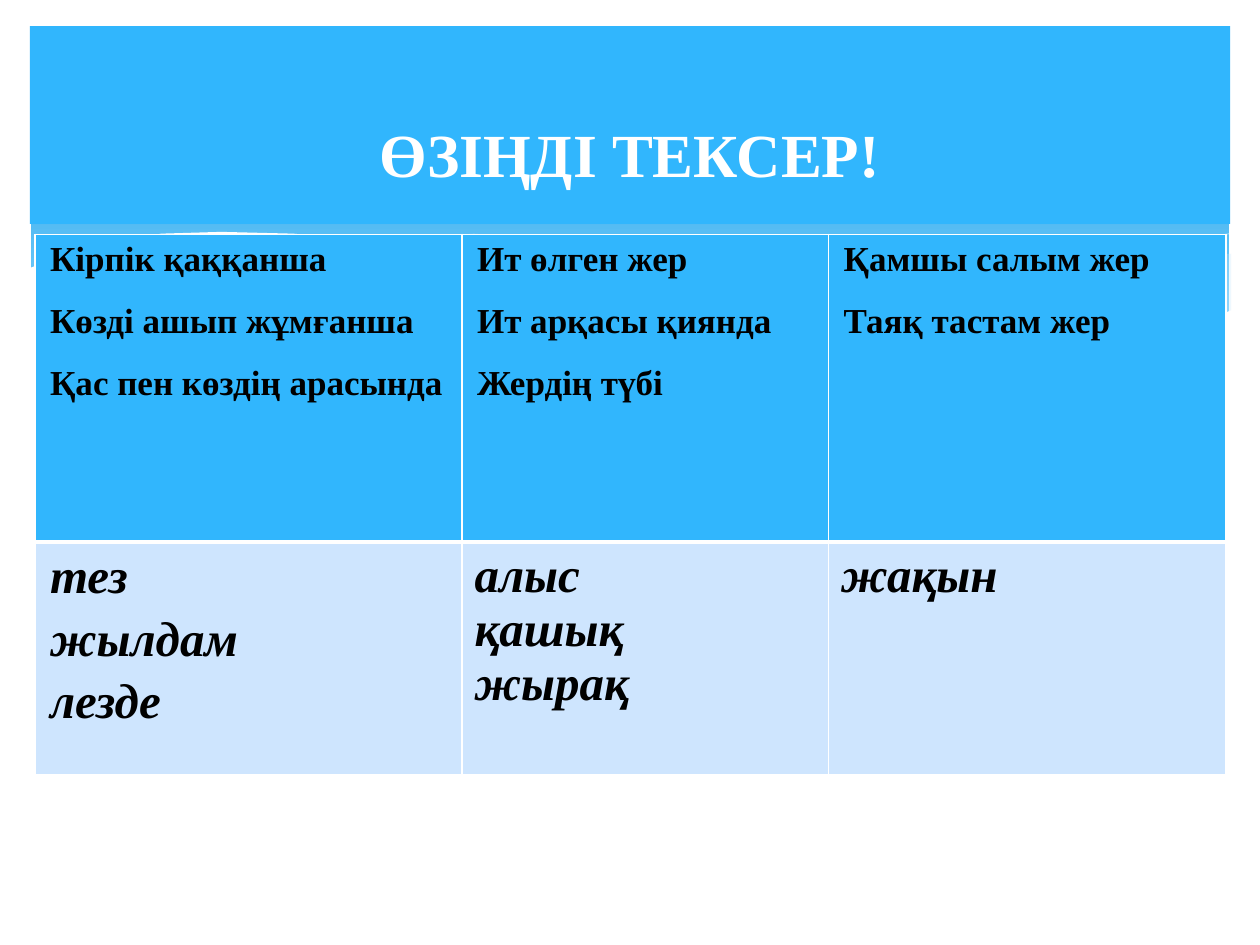
from lxml.etree import SubElement
from pptx import Presentation
from pptx.dml.color import RGBColor
from pptx.enum.shapes import MSO_SHAPE
from pptx.enum.text import MSO_ANCHOR, PP_ALIGN
from pptx.oxml.ns import qn
from pptx.util import Pt

COLORS = {"blue": "31B6FD", "pale": "CEE5FE", "white": "FFFFFF", "black": "000000",
          "deep": "0293E0", "sky": "83D3FE", "mist": "C6E7FC"}
FONT = "Times New Roman"
WAVE_BOX = (16.5, 132.5, 687, 104.5)
RIGHT_SWELL = [(1, .12), (.94, .15), (.88, .22), (.79, .32), (.67, .56),
               (.72, .61), (.8, .65), (.88, .63), (.94, .56), (1, .43)]
MIDDLE_SWELL = [(.91, .61), (.79, .48), (.64, .26), (.56, .15), (.46, .05),
                (.37, .01), (.28, .05), (.36, .13), (.45, .26), (.57, .44),
                (.67, .57), (.76, .64), (.84, .65)]
LONG_CREST = [(.3, .08), (.35, .03), (.41, .02), (.47, .03), (.53, .07),
              (.61, .17), (.7, .29), (.81, .46), (.93, .61)]
SHORT_CREST = [(.62, .5), (.68, .39), (.76, .27), (.85, .13), (.91, .07), (1, .01)]
WHITE_WAVE = [(1, .43), (.97, .5), (.93, .57), (.88, .61), (.82, .64),
              (.75, .63), (.68, .56), (.61, .48), (.53, .38), (.44, .25),
              (.36, .12), (.28, .05), (.22, .01), (.16, 0), (.11, .01),
              (.08, .05), (.04, .1), (.02, .15), (0, .2), (0, 1), (1, 1)]
TEXTS = [
    [["Кірпік қаққанша", "Көзді ашып жұмғанша", "Қас пен көздің арасында"],
     ["Ит өлген жер", "Ит арқасы қиянда", "Жердің түбі"],
     ["Қамшы салым жер", "Таяқ тастам жер"]],
    [["тез", "жылдам", "лезде"], ["алыс", "қашық", "жырақ"], ["жақын"]],
]


def rgb(name):
    return RGBColor.from_string(COLORS[name])


def add_run(p, text, size, color, italic=False):
    r = p.add_run()
    r.text = text
    r.font.name = FONT
    r.font.size = Pt(size)
    r.font.bold = True
    r.font.italic = italic
    r.font.color.rgb = rgb(color)


def add_curve(slide, box, points, fill=None, alpha=None):
    x, y, w, h = box
    spots = [(Pt(x + u * w), Pt(y + v * h)) for u, v in points]
    builder = slide.shapes.build_freeform(*spots[0])
    builder.add_line_segments(spots[1:], close=fill is not None)
    sp = builder.convert_to_shape()
    sp.shadow.inherit = False
    if fill is None:
        sp.fill.background()
        sp.line.color.rgb = rgb("white")
        sp.line.width = Pt(0.25)
        return
    sp.fill.solid()
    sp.fill.fore_color.rgb = rgb(fill)
    sp.line.fill.background()
    if alpha:
        color = sp.fill._xPr.find(qn("a:solidFill"))[0]
        SubElement(color, qn("a:alpha")).set("val", str(alpha * 1000))


def add_backdrop(slide, box):
    sp = slide.shapes.add_shape(MSO_SHAPE.ROUNDED_RECTANGLE, *map(Pt, box))
    sp.adjustments[0] = 0.034
    sp.shadow.inherit = False
    sp.line.fill.background()
    sp.fill.gradient()
    sp.fill.gradient_angle = 270
    for stop, color, position in zip(sp.fill.gradient_stops, ("deep", "sky"), (0, 0.9)):
        stop.color.rgb = rgb(color)
        stop.position = position


def add_waves(slide, box):
    add_curve(slide, box, RIGHT_SWELL, "mist", 29)
    add_curve(slide, box, MIDDLE_SWELL, "mist", 40)
    add_curve(slide, box, LONG_CREST)
    add_curve(slide, box, SHORT_CREST)
    add_curve(slide, box, WHITE_WAVE, "white")


def add_title(slide, box):
    sp = slide.shapes.add_shape(MSO_SHAPE.RECTANGLE, *map(Pt, box))
    sp.shadow.inherit = False
    sp.fill.solid()
    sp.fill.fore_color.rgb = rgb("blue")
    sp.line.fill.background()
    tf = sp.text_frame
    tf.word_wrap = True
    tf.vertical_anchor = MSO_ANCHOR.MIDDLE
    tf.margin_top = Pt(35)
    p = tf.paragraphs[0]
    p.alignment = PP_ALIGN.CENTER
    add_run(p, "ӨЗІҢДІ ТЕКСЕР!", 35, "white")


def set_borders(cell, widths):
    tcPr = cell._tc.get_or_add_tcPr()
    for i, (side, width) in enumerate(zip("LRTB", widths)):
        ln = tcPr.makeelement(qn(f"a:ln{side}"), {"w": str(Pt(width))})
        SubElement(SubElement(ln, qn("a:solidFill")), qn("a:srgbClr")).set("val", COLORS["white"])
        tcPr.insert(i, ln)


def fill_cell(cell, lines, is_header, is_loose):
    cell.fill.solid()
    cell.fill.fore_color.rgb = rgb("blue" if is_header else "pale")
    set_borders(cell, (1, 1, 1, 3) if is_header else (1, 1, 3, 1))
    if is_loose:
        cell.margin_left = cell.margin_right = Pt(8.64)
        cell.margin_top = cell.margin_bottom = 0
    tf = cell.text_frame
    for i, line in enumerate(lines):
        p = tf.add_paragraph() if i else tf.paragraphs[0]
        if is_loose:
            p.line_spacing = 1.15
        if is_header:
            p.space_after = Pt(10)
        add_run(p, line, 20 if is_header else 28, "black", italic=not is_header)


def add_phrase_table(slide, box):
    table = slide.shapes.add_table(2, 3, *map(Pt, box)).table
    for column, width in zip(table.columns, (244, 209.5, 227)):
        column.width = Pt(width)
    for row, height in zip(table.rows, (175.75, 132.75)):
        row.height = Pt(height)
    for i, texts in enumerate(TEXTS):
        for j, lines in enumerate(texts):
            fill_cell(table.cell(i, j), lines, i == 0, i == 0 or j == 0)


def main():
    prs = Presentation()
    prs.slide_width, prs.slide_height = Pt(720), Pt(540)
    slide = prs.slides.add_slide(prs.slide_layouts[6])
    add_backdrop(slide, (18, 18, 684.5, 194.5))
    add_waves(slide, WAVE_BOX)
    add_title(slide, (17, 15, 686, 113))
    add_phrase_table(slide, (20, 134, 680.5, 308.5))
    prs.save("out.pptx")


if __name__ == "__main__":
    main()
